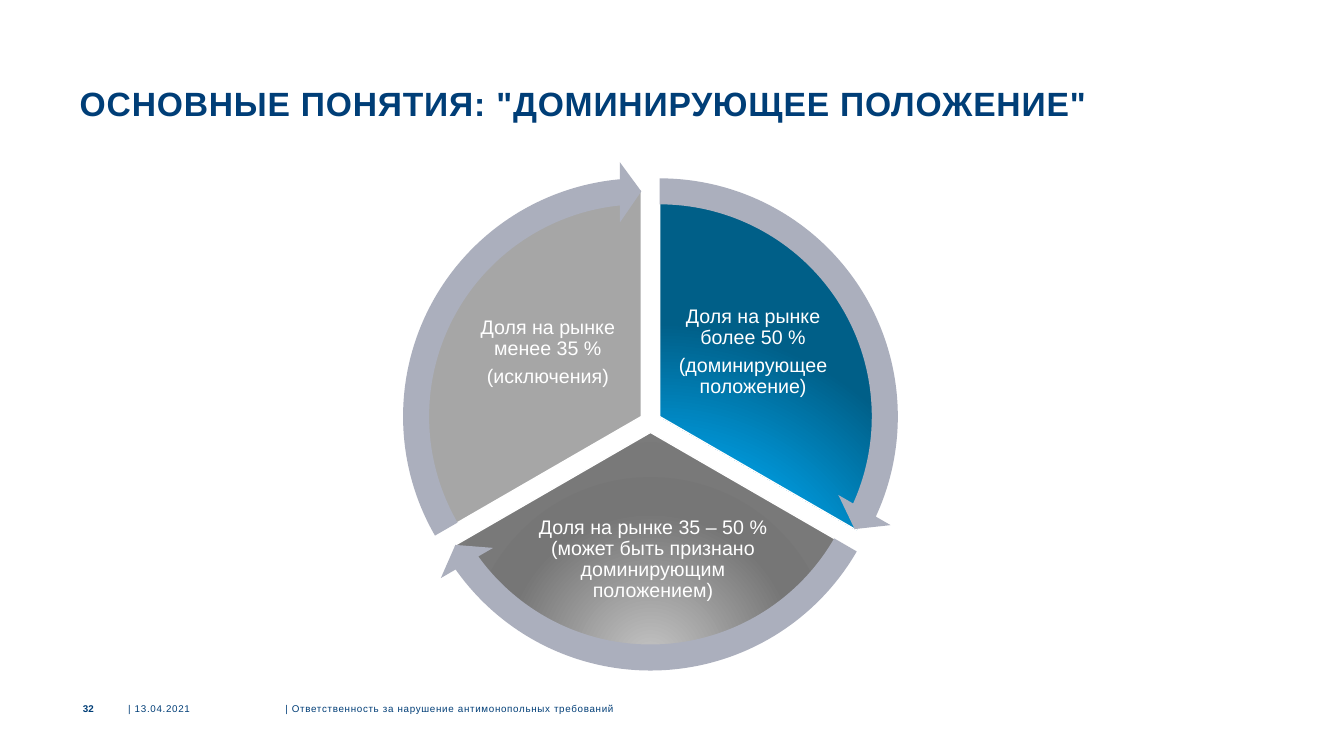
from dataclasses import dataclass
from math import cos, radians, sin

from pptx import Presentation
from pptx import util as u
from pptx.dml.color import RGBColor
from pptx.enum import shapes, text
from pptx.oxml import parse_xml
from pptx.oxml.ns import nsdecls, qn

WIDTH, HEIGHT = u.Inches(13.33), u.Inches(7.5)


@dataclass(frozen=True)
class Theme:
    font: str = "Arial"
    navy: str = "003E77"
    white: str = "FFFFFF"
    arrow: str = "ABAFBD"
    blue: tuple = ("8EDDFF", "00A8F1", "005F88")
    dark_gray: tuple = ("C5C5C5", "767676", "808080")
    light_gray: tuple = ("F2F2F2", "A6A6A6", "A6A6A6")
    title_size: float = 24
    label_size: float = 14
    footer_size: float = 7


@dataclass(frozen=True)
class Sector:
    start: int
    colors: tuple
    lines: tuple
    label: tuple  # centre offset x, y, width, height in % of the diagram width


THEME = Theme()
SECTORS = (
    Sector(270, THEME.blue,
           ("Доля на рынке более 50 %", "(доминирующее положение)"),
           (20.1, -13.6, 31.8, 26.4)),
    Sector(30, THEME.dark_gray,
           ("Доля на рынке 35 – 50 % (может быть признано доминирующим положением)",),
           (0.5, 27, 47.7, 23.3)),
    Sector(150, THEME.light_gray,
           ("Доля на рынке менее 35 %", "(исключения)"),
           (-20.1, -13.6, 31.8, 26.4)),
)


def grid_box(left, top, width, height):
    """Turn columns and rows of a 100 x 100 slide grid into lengths."""
    column, row = WIDTH / 100, HEIGHT / 100
    return int(left * column), int(top * row), int(width * column), int(height * row)


def centered_box(x, y, width, height):
    return int(x - width / 2), int(y - height / 2), int(width), int(height)


def write_text(shape, lines, size, color, align, anchor, bold=False,
               tracking=0, inset=0, wrap=True):
    """Fill a shape with paragraphs; tracking is in points."""
    frame = shape.text_frame
    frame.word_wrap = wrap
    frame.auto_size = text.MSO_AUTO_SIZE.NONE
    frame.vertical_anchor = anchor
    frame.margin_left = frame.margin_right = u.Inches(inset)
    frame.margin_top = frame.margin_bottom = u.Inches(inset)
    frame.text = "\n".join(lines)
    for paragraph in frame.paragraphs:
        paragraph.alignment = align
        font = paragraph.font
        font.name, font.size, font.bold = THEME.font, u.Pt(size), bold
        font.color.rgb = RGBColor.from_string(color)
        for run in paragraph.runs:
            run._r.get_or_add_rPr().set("spc", str(int(tracking * 100)))
    return frame


def fill_radial(shape, colors):
    """Apply a circular gradient centred below the shape."""
    stops = "".join(
        f'<a:gs pos="{position}000"><a:srgbClr val="{color}"/></a:gs>'
        for position, color in zip((0, 46, 100), colors))
    gradient = parse_xml(
        f'<a:gradFill {nsdecls("a")} rotWithShape="1"><a:gsLst>{stops}</a:gsLst>'
        '<a:path path="circle"><a:fillToRect l="50000" t="130000" r="50000" b="-30000"/>'
        '</a:path></a:gradFill>')
    shape.fill.background()
    properties = shape._element.spPr
    properties.replace(properties.find(qn("a:noFill")), gradient)


def add_preset(group, preset, box, adjustments):
    shape = group.shapes.add_shape(preset, *box)
    shape.shadow.inherit = False
    for index, value in enumerate(adjustments):
        shape.adjustments[index] = value
    return shape


def add_title(slide, box):
    title = slide.shapes.title
    title.left, title.top, title.width, title.height = box
    frame = write_text(title, ['ОСНОВНЫЕ ПОНЯТИЯ: "ДОМИНИРУЮЩЕЕ ПОЛОЖЕНИЕ"'],
                       THEME.title_size, THEME.navy, text.PP_ALIGN.LEFT,
                       text.MSO_ANCHOR.TOP, bold=True, tracking=0.6)
    frame.paragraphs[0].line_spacing = u.Pt(31)


def add_sector(group, sector, middle, hub, diameter):
    x, y = middle
    pie = add_preset(group, shapes.MSO_SHAPE.PIE,
                     centered_box(x, y, diameter * 0.89, diameter * 0.89),
                     (sector.start * 0.6, (sector.start + 120) % 360 * 0.6))
    fill_radial(pie, sector.colors)
    pie.line.color.rgb = RGBColor.from_string(THEME.white)
    pie.line.width = u.Pt(1)

    dx, dy, width, height = (share * diameter / 100 for share in sector.label)
    label = group.shapes.add_textbox(
        *centered_box(hub[0] + dx, hub[1] + dy, width, height))
    frame = write_text(label, sector.lines, THEME.label_size, THEME.white,
                       text.PP_ALIGN.CENTER, text.MSO_ANCHOR.MIDDLE, inset=0.02)
    for paragraph in frame.paragraphs:
        paragraph.line_spacing = 0.9
        paragraph.space_after = u.Pt(THEME.label_size * 0.35)


def add_arrow(group, sector, middle, diameter):
    head = 3.275
    end = (sector.start + 120) % 360 * 0.6
    arrow = add_preset(group, shapes.MSO_SHAPE.CIRCULAR_ARROW,
                       centered_box(*middle, diameter, diameter),
                       (0.051, head, end - head, sector.start * 0.6, 0.059))
    arrow.fill.solid()
    arrow.fill.fore_color.rgb = RGBColor.from_string(THEME.arrow)
    arrow.line.fill.background()


def add_cycle(slide, box):
    left, top, diameter, height = box
    hub = left + diameter / 2, top + height / 2
    shift = diameter * 0.0207
    group = slide.shapes.add_group_shape()
    middles = []
    for sector in SECTORS:
        angle = radians(sector.start + 60)
        middles.append((hub[0] + shift * cos(angle), hub[1] + shift * sin(angle)))
    for sector, middle in zip(SECTORS, middles):
        add_sector(group, sector, middle, hub, diameter)
    for sector, middle in zip(SECTORS, middles):
        add_arrow(group, sector, middle, diameter)


def add_footer(slide, top, height):
    left_align, right_align = text.PP_ALIGN.LEFT, text.PP_ALIGN.RIGHT
    parts = (
        ("32", 5.93, 1.05, right_align, True, 0, False),
        ("| 13.04.2021", 9.53, 11.48, left_align, False, 0.5, False),
        ("| Ответственность за нарушение антимонопольных требований",
         21.23, 44.11, left_align, False, 0.5, True),
    )
    for words, left, width, align, bold, tracking, wrap in parts:
        shape = slide.shapes.add_textbox(*grid_box(left, top, width, height))
        write_text(shape, [words], THEME.footer_size, THEME.navy, align,
                   text.MSO_ANCHOR.MIDDLE, bold, tracking, wrap=wrap)


def main():
    presentation = Presentation()
    presentation.slide_width, presentation.slide_height = WIDTH, HEIGHT
    slide = presentation.slides.add_slide(presentation.slide_layouts[5])
    add_title(slide, grid_box(5.93, 10.53, 88.22, 11.6))
    add_cycle(slide, grid_box(29.4, 22, 38, 67.6))
    add_footer(slide, 92.67, 2.13)
    presentation.save("out.pptx")


if __name__ == "__main__":
    main()
